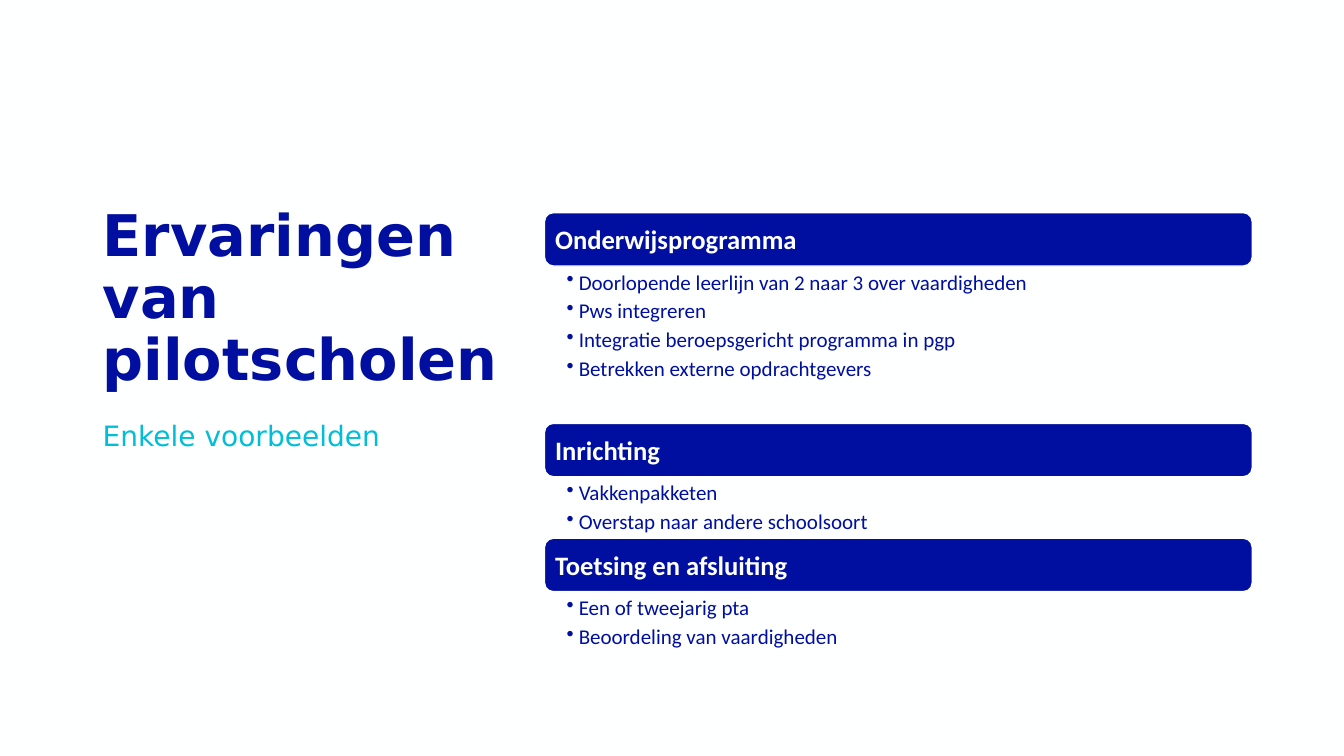
from dataclasses import dataclass
from lxml.etree import SubElement
from pptx import Presentation
from pptx.dml.color import RGBColor as Color
from pptx.enum.shapes import MSO_SHAPE as Shape
from pptx.enum.text import MSO_ANCHOR as Anchor, PP_ALIGN as Align
from pptx.oxml.ns import qn
from pptx.util import Pt

PX = 9144


@dataclass(frozen=True)
class Theme:
    navy: str = "000FA0"
    cyan: str = "00BED7"
    paper: str = "FEFFFF"
    display: str = "DejaVu Sans"
    body: str = "Calibri"
    title_size: int = 41
    subtitle_size: int = 20
    heading_size: int = 19
    bullet_size: int = 15


THEME = Theme()
BLOCK_LEFT, BLOCK_TOP, BLOCK_WIDTH = 540, 211, 702
BAR_HEIGHT = 53
SECTIONS = [
    ("Onderwijsprogramma", 156, [
        "Doorlopende leerlijn van 2 naar 3 over vaardigheden",
        "Pws integreren",
        "Integratie beroepsgericht programma in pgp",
        "Betrekken externe opdrachtgevers",
    ]),
    ("Inrichting", 61, ["Vakkenpakketen", "Overstap naar andere schoolsoort"]),
    ("Toetsing en afsluiting", 61, ["Een of tweejarig pta", "Beoordeling van vaardigheden"]),
]


def px(*lengths):
    return [length * PX for length in lengths]


def add_bullet(para):
    props = para._p.get_or_add_pPr()
    props.set("marL", str(12 * PX))
    props.set("indent", str(-12 * PX))
    SubElement(props, qn("a:buChar")).set("char", "•")


def write(box, lines, *, font, size, color, bold=False, spacing=1.0, after=0,
          insets=(10, 5, 10, 5), anchor=Anchor.TOP, bullets=False):
    frame = box.text_frame
    frame.word_wrap = True
    frame.vertical_anchor = anchor
    (frame.margin_left, frame.margin_top,
     frame.margin_right, frame.margin_bottom) = px(*insets)
    for index, line in enumerate(lines):
        para = frame.add_paragraph() if index else frame.paragraphs[0]
        para.alignment = Align.LEFT
        para.line_spacing = spacing
        para.space_after = Pt(after)
        if bullets:
            add_bullet(para)
        span = para.add_run()
        span.text = line
        span.font.name = font
        span.font.size = Pt(size)
        span.font.bold = bold
        span.font.color.rgb = Color.from_string(color)


def add_text(page, area, lines, **style):
    write(page.shapes.add_textbox(*px(*area)), lines, **style)


def add_heading_bar(page, area, heading):
    bar = page.shapes.add_shape(Shape.ROUNDED_RECTANGLE, *px(*area))
    bar.shadow.inherit = False
    bar.fill.solid()
    bar.fill.fore_color.rgb = Color.from_string(THEME.navy)
    bar.line.color.rgb = Color.from_string(THEME.paper)
    bar.line.width = Pt(1)
    write(bar, [heading], font=THEME.body, size=THEME.heading_size, color=THEME.paper,
          bold=True, insets=(8, 8, 8, 8), anchor=Anchor.MIDDLE)


def add_section(page, top, heading, list_height, items):
    add_heading_bar(page, (BLOCK_LEFT, top, BLOCK_WIDTH, BAR_HEIGHT), heading)
    add_text(page, (BLOCK_LEFT, top + BAR_HEIGHT, BLOCK_WIDTH, list_height), items,
             font=THEME.body, size=THEME.bullet_size, color=THEME.navy,
             after=2.6, insets=(22, 3, 15, 3), bullets=True)
    return top + BAR_HEIGHT + list_height


def main():
    deck = Presentation()
    deck.slide_width, deck.slide_height = px(1333, 750)
    page = deck.slides.add_slide(deck.slide_layouts[6])
    page.background.fill.solid()
    page.background.fill.fore_color.rgb = Color.from_string(THEME.paper)

    add_text(page, (92, 200, 431, 202), ["Ervaringen van pilotscholen"], font=THEME.display,
             size=THEME.title_size, color=THEME.navy, bold=True, spacing=0.9)
    add_text(page, (92, 414, 431, 237), ["Enkele voorbeelden"], font=THEME.display,
             size=THEME.subtitle_size, color=THEME.cyan, spacing=0.9)

    top = BLOCK_TOP
    for heading, list_height, items in SECTIONS:
        top = add_section(page, top, heading, list_height, items)
    deck.save("out.pptx")


if __name__ == "__main__":
    main()
